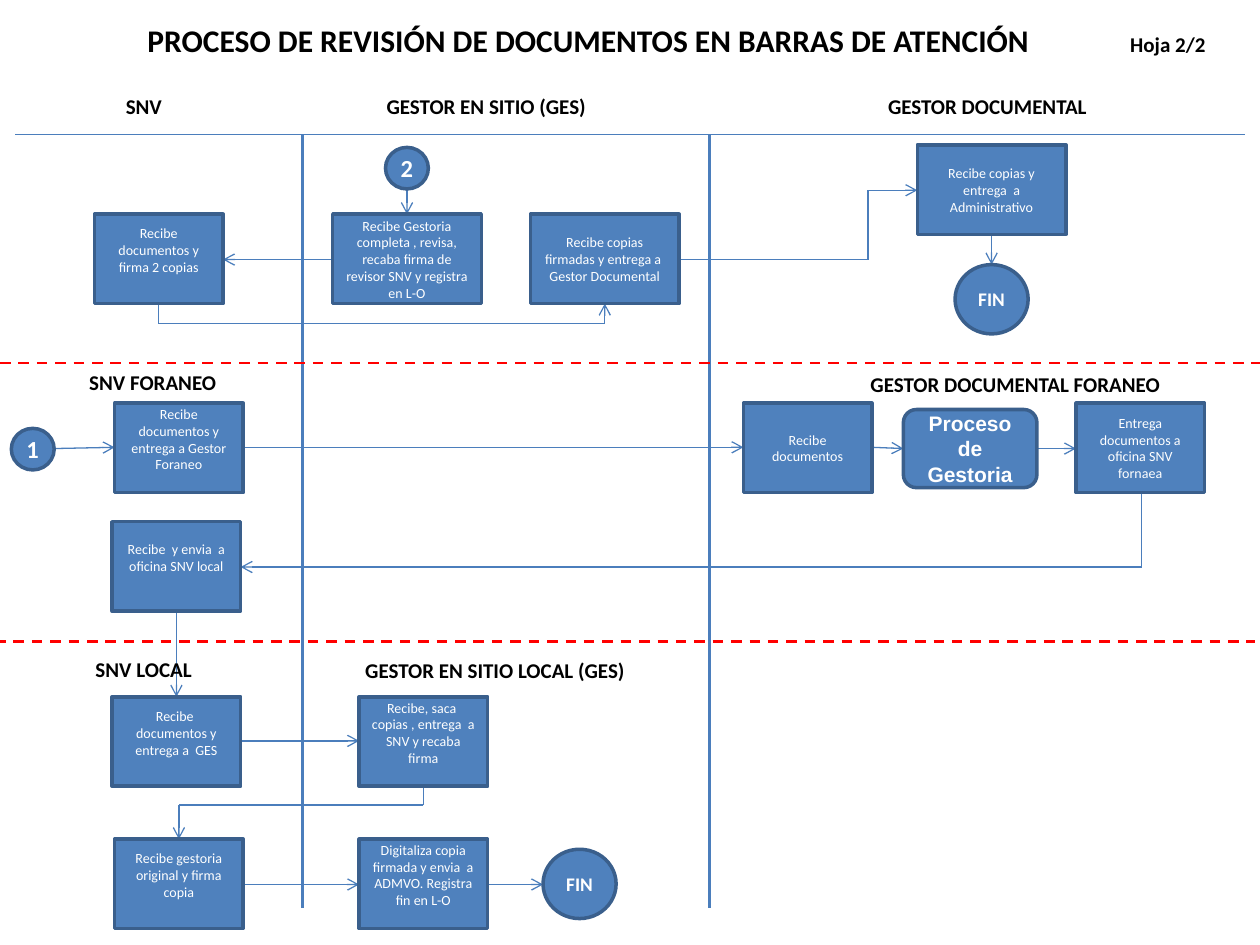
from typing import NamedTuple

from pptx import Presentation, util as u
from pptx.dml.color import RGBColor
from pptx.enum import dml, shapes, text
from pptx.oxml.ns import qn
from lxml import etree

COLORS = {"fill": "4F81BD", "border": "3A5F8C", "flow": "4B7EBC",
          "divider": "FF0000", "ink": "000000", "paper": "FFFFFF"}
SHAPE = shapes.MSO_SHAPE
STEP_H = 0.71
WIDE, NARROW = 1.18, 1.02
LIFT = 0.19


class Style(NamedTuple):
    geometry: SHAPE
    font: dict
    margins: dict


class Node(NamedTuple):
    words: str
    left: float
    top: float
    width: float
    height: float
    style: Style


class Label(NamedTuple):
    words: str
    left: float
    top: float
    width: float
    tabs: tuple = ()


class Route(NamedTuple):
    points: tuple
    color: str = "flow"
    weight: float = 0.75
    arrow: bool = True
    dashed: bool = False


def font_format(size: float, bold: bool = True, name: str = "Calibri") -> dict:
    return {"size": u.Pt(size), "bold": bold, "name": name}


NO_INSET = {f"margin_{side}": 0 for side in ("left", "right", "top", "bottom")}
HEADING = font_format(12)
STEP = Style(SHAPE.FLOWCHART_PROCESS, font_format(8, False), {})
RAISED = STEP._replace(margins={"margin_bottom": u.Inches(LIFT)})
SUBPROCESS = Style(SHAPE.FLOWCHART_ALTERNATE_PROCESS, font_format(12, name="Arial"), {})
END = Style(SHAPE.OVAL, font_format(11), NO_INSET)
LINK = Style(SHAPE.OVAL, font_format(14), NO_INSET)


def step(words: str, left: float, top: float, width: float = NARROW,
         style: Style = STEP) -> Node:
    return Node(words, left, top, width, STEP_H, style)


def end(left: float, top: float) -> Node:
    return Node("FIN", left, top, 0.58, 0.55, END)


def link(words: str, left: float, top: float) -> Node:
    return Node(words, left, top, 0.34, 0.33, LINK)


NODES = [
    link("2", 3.06, 1.17),
    step("Recibe Gestoria completa , revisa, recaba firma de revisor SNV y registra en L-O",
         2.64, 1.7, WIDE),
    step("Recibe documentos y firma 2 copias", 0.75, 1.7, style=RAISED),
    step("Recibe copias firmadas y entrega a  Gestor Documental", 4.21, 1.7, WIDE),
    step("Recibe copias y entrega  a Administrativo", 7.28, 1.15, WIDE),
    end(7.58, 2.1),
    link("1", 0.09, 3.4),
    step("Recibe documentos y entrega a Gestor Foraneo", 0.91, 3.2, style=RAISED),
    step("Recibe documentos", 5.9, 3.2),
    Node("Proceso de Gestoria", 7.17, 3.25, 1.06, 0.62, SUBPROCESS),
    step("Entrega documentos a oficina SNV fornaea", 8.54, 3.2),
    step("Recibe  y envia  a oficina SNV local", 0.89, 4.14, style=RAISED),
    step("Recibe  documentos y entrega a  GES", 0.89, 5.53, style=RAISED),
    step("Recibe, saca  copias , entrega  a SNV y recaba firma", 2.85, 5.53, style=RAISED),
    step("Recibe gestoria original y firma copia", 0.91, 6.66, style=RAISED),
    step("Digitaliza copia firmada y envia  a ADMVO. Registra fin en L-O",
         2.85, 6.66, style=RAISED),
    end(4.31, 6.74),
]

LABELS = [
    Label("\tSNV\tGESTOR EN SITIO (GES)\tGESTOR DOCUMENTAL", 0.12, 0.69, 9.76,
          (0.78, 2.85, 6.83)),
    Label("SNV FORANEO", 0.61, 2.88, 1.24),
    Label("GESTOR DOCUMENTAL FORANEO", 6.81, 2.9, 2.58),
    Label("SNV LOCAL", 0.66, 5.16, 1.24),
    Label("GESTOR EN SITIO LOCAL (GES)", 2.8, 5.17, 2.28),
]

LANES = [Route(((0.12, 1.07), (9.88, 1.07)), arrow=False)]
LANES += [Route(((x, 1.07), (x, 7.21)), weight=2, arrow=False) for x in (2.4, 5.63)]
LANES += [Route(((x, y), (x + 10, y)), "divider", 1.5, False, True)
          for x, y in ((0, 2.88), (-0.04, 5.09))]

FLOWS = [Route(points) for points in (
    ((3.23, 1.42), (3.23, 1.7)),
    ((2.64, 2.06), (1.77, 2.06)),
    ((1.26, 2.41), (1.26, 2.57), (4.8, 2.57), (4.8, 2.41)),
    ((5.39, 2.06), (6.89, 2.06), (6.89, 1.51), (7.28, 1.51)),
    ((7.87, 1.86), (7.87, 2.1)),
    ((0.43, 3.56), (0.91, 3.55)),
    ((1.93, 3.55), (5.9, 3.55)),
    ((6.92, 3.55), (7.17, 3.56)),
    ((8.23, 3.56), (8.54, 3.56)),
    ((9.06, 3.91), (9.06, 4.5), (1.91, 4.5)),
    ((1.4, 4.85), (1.4, 5.53)),
    ((1.91, 5.88), (2.85, 5.88)),
    ((3.36, 6.24), (3.36, 6.39), (1.42, 6.39), (1.42, 6.66)),
    ((1.93, 7.02), (2.85, 7.02)),
    ((3.87, 7.02), (4.31, 7.02)),
)]


def rgb(key: str) -> RGBColor:
    return RGBColor.from_string(COLORS[key])


def apply(target, values: dict) -> None:
    for attribute, value in values.items():
        setattr(target, attribute, value)


def write(paragraph, words: str, font: dict, color: str, align, tabs: tuple = ()) -> None:
    paragraph.alignment = align
    if tabs:
        stops = etree.SubElement(paragraph._p.get_or_add_pPr(), qn("a:tabLst"))
        for position in tabs:
            etree.SubElement(stops, qn("a:tab"), pos=str(u.Inches(position)), algn="l")
    run = paragraph.add_run()
    run.text = words
    apply(run.font, font)
    run.font.color.rgb = rgb(color)


def draw_route(slide, route: Route) -> None:
    for start, finish in zip(route.points, route.points[1:]):
        segment = slide.shapes.add_connector(
            shapes.MSO_CONNECTOR.STRAIGHT, *map(u.Inches, start + finish))
        segment.line.color.rgb = rgb(route.color)
        segment.line.width = u.Pt(route.weight)
        if route.dashed:
            segment.line.dash_style = dml.MSO_LINE.DASH
        if route.arrow and finish == route.points[-1]:
            etree.SubElement(segment.line._get_or_add_ln(), qn("a:tailEnd"), type="arrow")
        etree.SubElement(segment._element.spPr, qn("a:effectLst"))


def draw_node(slide, node: Node) -> None:
    box = slide.shapes.add_shape(node.style.geometry, *map(u.Inches, node[1:5]))
    box.shadow.inherit = False
    box.fill.solid()
    box.fill.fore_color.rgb = rgb("fill")
    box.line.color.rgb = rgb("border")
    box.line.width = u.Pt(2)
    apply(box.text_frame, {"word_wrap": True, "vertical_anchor": text.MSO_ANCHOR.MIDDLE,
                           **node.style.margins})
    write(box.text_frame.paragraphs[0], node.words, node.style.font, "paper",
          text.PP_ALIGN.CENTER)


def draw_label(slide, label: Label) -> None:
    box = slide.shapes.add_textbox(*map(u.Inches, (label.left, label.top, label.width, 0.3)))
    box.text_frame.word_wrap = True
    write(box.text_frame.paragraphs[0], label.words, HEADING, "ink",
          text.PP_ALIGN.LEFT, label.tabs)


def draw_title(slide) -> None:
    title = slide.shapes.title
    apply(title, {"left": u.Inches(0.12), "top": u.Inches(0.12),
                  "width": u.Inches(9.61), "height": u.Inches(0.4)})
    apply(title.text_frame, {"auto_size": text.MSO_AUTO_SIZE.NONE, "word_wrap": True,
                             "vertical_anchor": text.MSO_ANCHOR.MIDDLE})
    heading = title.text_frame.paragraphs[0]
    write(heading, "\tPROCESO DE REVISIÓN DE DOCUMENTOS EN BARRAS DE ATENCIÓN",
          font_format(18), "ink", text.PP_ALIGN.LEFT, (0.95, 8.75))
    write(heading, "\tHoja 2/2", HEADING, "ink", text.PP_ALIGN.LEFT)


def main() -> None:
    deck = Presentation()
    apply(deck, {"slide_width": u.Inches(10), "slide_height": u.Inches(7.5)})
    slide = deck.slides.add_slide(deck.slide_layouts[5])
    draw_title(slide)
    for items, draw in ((LANES + FLOWS, draw_route), (NODES, draw_node), (LABELS, draw_label)):
        for item in items:
            draw(slide, item)
    deck.save("out.pptx")


if __name__ == "__main__":
    main()
